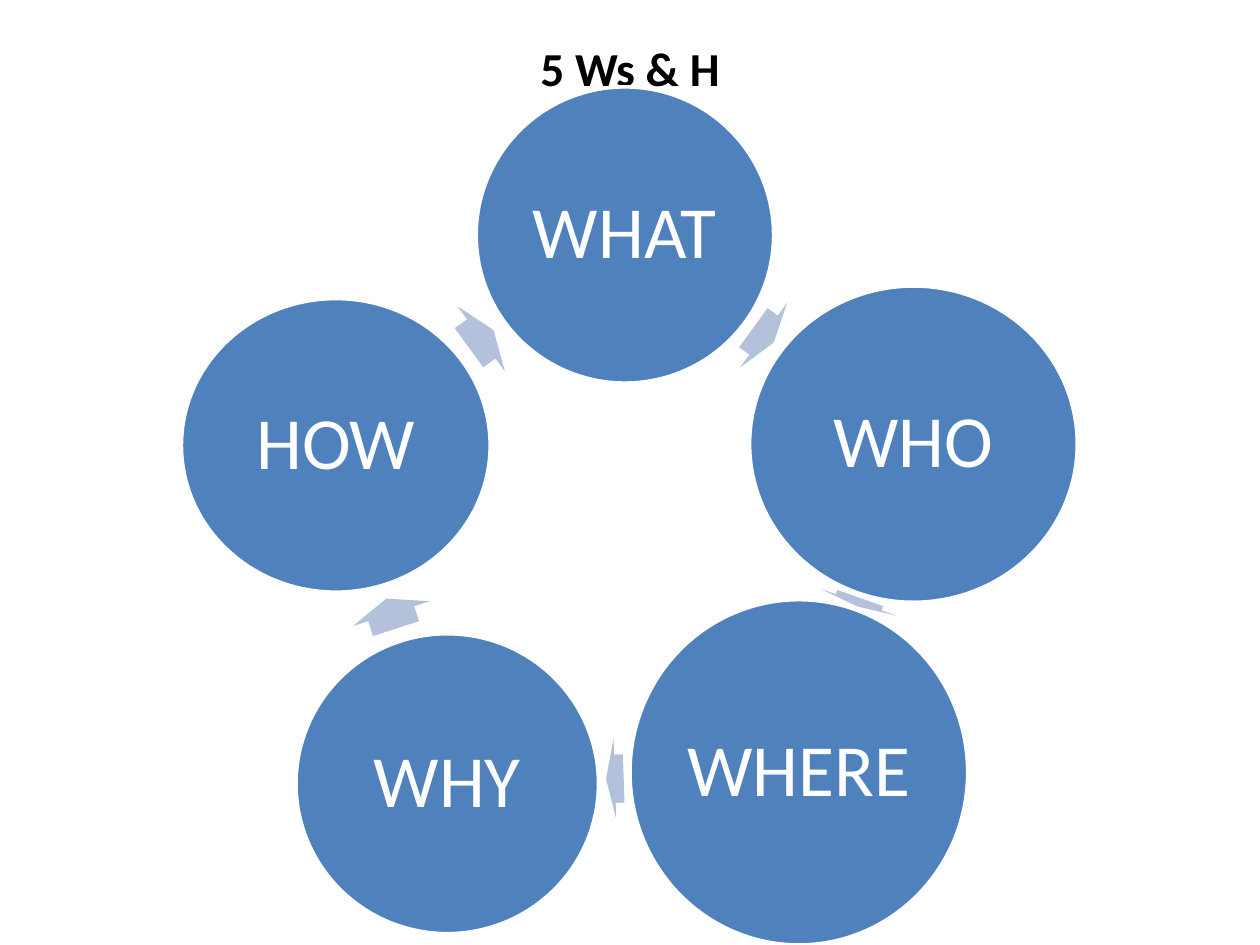
from dataclasses import dataclass

from pptx import Presentation
from pptx.dml.color import RGBColor as Rgb
from pptx.enum.shapes import MSO_SHAPE as Kind
from pptx.enum.text import MSO_ANCHOR as Anchor, PP_ALIGN as Align
from pptx.util import Inches, Pt


@dataclass(frozen=True)
class Theme:
    font: str = "Calibri"
    ink: str = "000000"
    paper: str = "FFFFFF"
    disc: str = "4F81BD"
    arrow: str = "B3C1DB"
    head: int = 27
    label: int = 42
    edge: int = 2
    inset: float = 0.06


def apply(item, form):
    for name, value in form.items():
        setattr(item, name, value)


class Board:
    def __init__(self, theme, slide):
        self.theme = theme
        self.slide = slide

    def label(self, shape, text, size, color, bold=False):
        frame = shape.text_frame
        frame.text = text
        frame.vertical_anchor = Anchor.MIDDLE
        line = frame.paragraphs[0]
        line.alignment = Align.CENTER
        font = line.runs[0].font
        apply(font, {"name": self.theme.font, "size": Pt(size), "bold": bold})
        font.color.rgb = Rgb.from_string(color)

    def title(self, text, box):
        shape = self.slide.shapes.title
        names = ("left", "top", "width", "height")
        apply(shape, dict(zip(names, map(Inches, box))))
        self.label(shape, text, self.theme.head, self.theme.ink, True)

    def shape(self, kind, box, color):
        shape = self.slide.shapes.add_shape(kind, *map(Inches, box))
        shape.shadow.inherit = False
        shape.fill.solid()
        shape.fill.fore_color.rgb = Rgb.from_string(color)
        return shape

    def disc(self, text, box):
        theme = self.theme
        shape = self.shape(Kind.OVAL, box, theme.disc)
        shape.line.color.rgb = Rgb.from_string(theme.paper)
        shape.line.width = Pt(theme.edge)
        self.label(shape, text, theme.label, theme.paper)
        frame = shape.text_frame
        sides = ("left", "top", "right", "bottom")
        apply(frame, {f"margin_{side}": Inches(theme.inset) for side in sides})
        frame.word_wrap = False
        frame.paragraphs[0].line_spacing = 0.9

    def arrow(self, box, turn):
        shape = self.shape(Kind.RIGHT_ARROW, box, self.theme.arrow)
        shape.line.fill.background()
        shape.adjustments[0] = 0.6
        shape.adjustments[1] = 0.5
        shape.rotation = turn


STEPS = [
    ("WHAT", (3.78, 0.69, 2.36, 2.35), (5.96, 2.34, 0.2), 36),
    ("WHO", (5.95, 2.27, 2.6, 2.51), (6.78, 4.46, 0.07), 109.4),
    ("WHERE", (5, 4.76, 2.68, 2.74), (4.81, 5.86, 0.14), 178.1),
    ("WHY", (2.35, 5.03, 2.4, 2.38), (2.98, 4.55, 0.25), 252),
    ("HOW", (1.44, 2.37, 2.45, 2.33), (3.7, 2.37, 0.24), 324),
]
SPAN = 0.64


def main():
    deck = Presentation()
    apply(deck, {"slide_width": Inches(10), "slide_height": Inches(7.5)})
    board = Board(Theme(), deck.slides.add_slide(deck.slide_layouts[5]))
    board.title("5 Ws & H", (0.5, 0.3, 9, 0.48))
    for text, disc, arrow, turn in STEPS:
        board.disc(text, disc)
        board.arrow((*arrow, SPAN), turn)
    deck.save("out.pptx")


if __name__ == "__main__":
    main()
